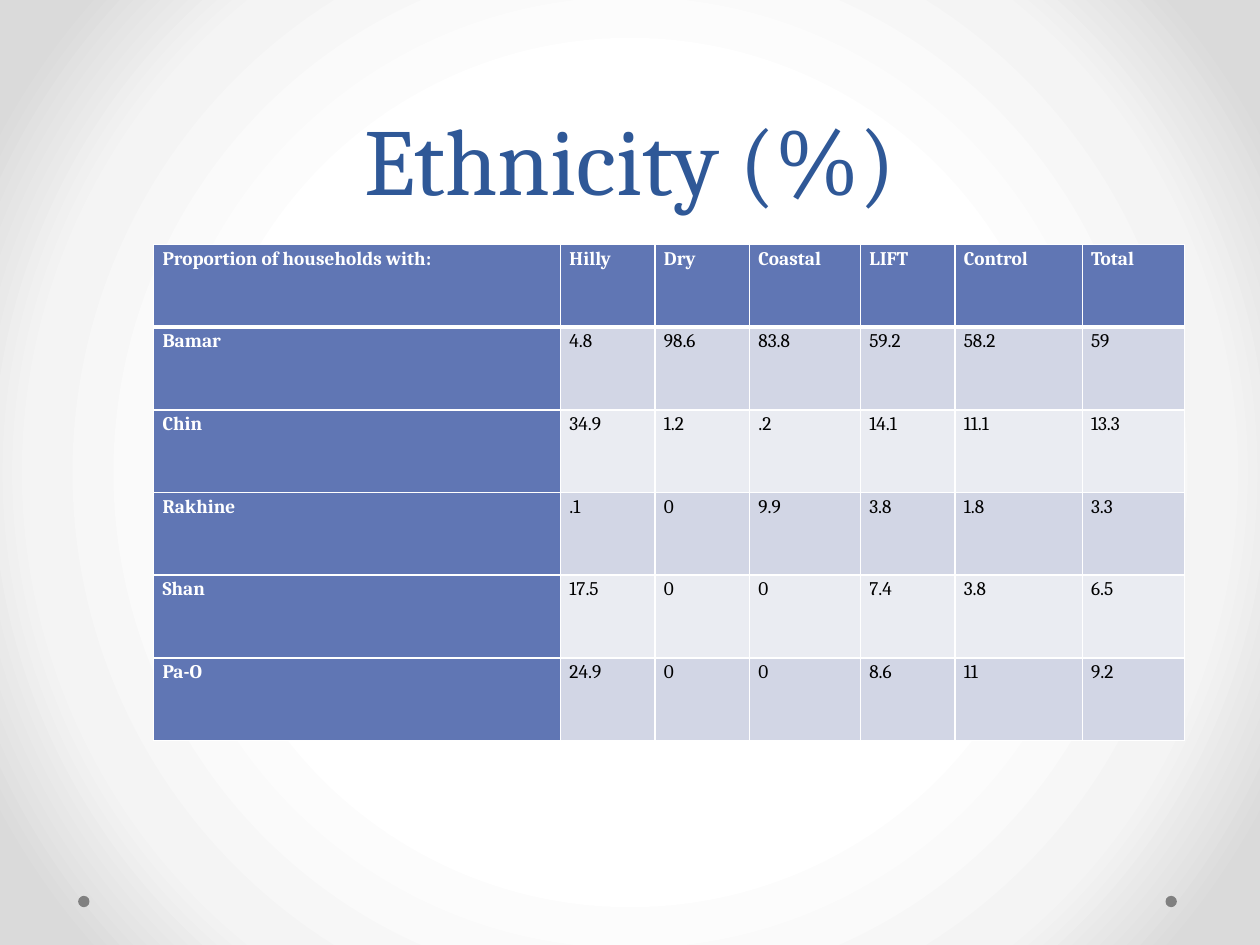
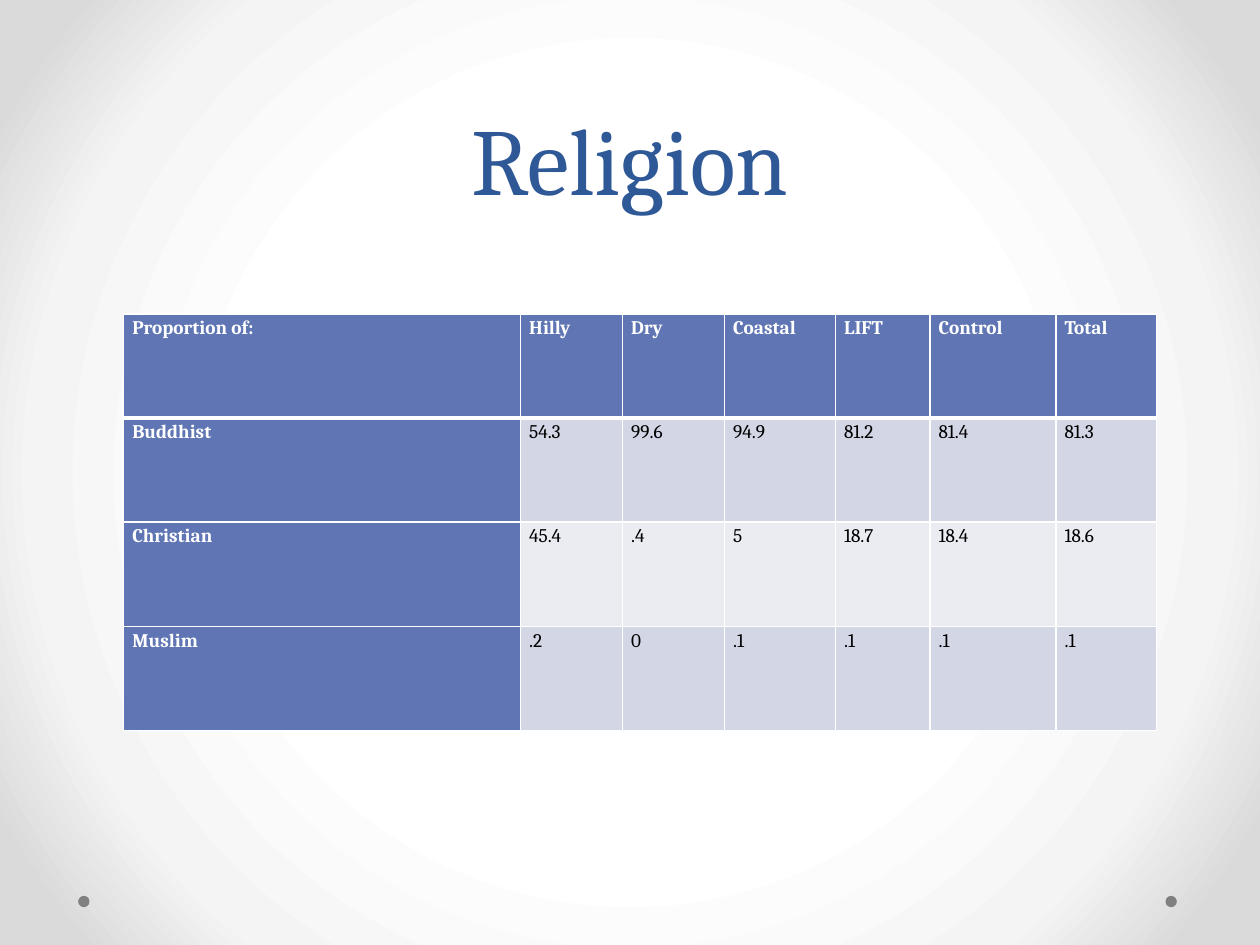
from lxml.etree import SubElement
from pptx import Presentation
from pptx.dml.color import RGBColor
from pptx.enum.shapes import MSO_SHAPE
from pptx.enum.text import MSO_ANCHOR, MSO_AUTO_SIZE, PP_ALIGN
from pptx.oxml import parse_xml
from pptx.oxml.ns import nsdecls, qn
from pptx.util import Inches, Pt

FONT = "Cambria"
WHITE, BLACK = "FFFFFF", "000000"
TITLE_BLUE, HEADER_BLUE = "2F5897", "6076B4"
BANDS = ("D2D6E5", "EAECF2")
DOT_GRAY = "808080"
BACKDROP_STOPS = ((50, "FFFFFF"), (76, "F4F4F4"), (92, "DADADA"))

TITLE_FRAME = {"vertical_anchor": MSO_ANCHOR.BOTTOM, "auto_size": MSO_AUTO_SIZE.NONE,
               "word_wrap": True}
TITLE_PARAGRAPH = {"alignment": PP_ALIGN.CENTER, "line_spacing": Pt(58)}
TITLE_FONT = {"name": FONT, "size": Pt(54)}
CELL_MARGINS = {"margin_left": Inches(0.07), "margin_right": Inches(0.07),
                "margin_top": 0, "margin_bottom": 0}
CELL_PARAGRAPH = {"line_spacing": 1.15, "space_before": Pt(6), "space_after": Pt(6)}
CELL_FONT = {"name": FONT, "size": Pt(11)}

REGIONS = ["Hilly", "Dry", "Coastal", "LIFT", "Control", "Total"]
ETHNICITY = [
    ["Proportion of households with:", *REGIONS],
    ["Bamar", "4.8", "98.6", "83.8", "59.2", "58.2", "59"],
    ["Chin", "34.9", "1.2", ".2", "14.1", "11.1", "13.3"],
    ["Rakhine", ".1", "0", "9.9", "3.8", "1.8", "3.3"],
    ["Shan", "17.5", "0", "0", "7.4", "3.8", "6.5"],
    ["Pa-O", "24.9", "0", "0", "8.6", "11", "9.2"],
]
RELIGION = [
    ["Proportion of:", *REGIONS],
    ["Buddhist", "54.3", "99.6", "94.9", "81.2", "81.4", "81.3"],
    ["Christian", "45.4", ".4", "5", "18.7", "18.4", "18.6"],
    ["Muslim", ".2", "0", ".1", ".1", ".1", ".1"],
]


def color(hex_value):
    return RGBColor.from_string(hex_value)


def apply(target, values):
    for name, value in values.items():
        setattr(target, name, value)


def paint_backdrop(master):
    master.background.fill.solid()
    properties = master.element.xpath(".//p:bgPr")[0]
    stops = "".join(
        f'<a:gs pos="{position * 1000}"><a:srgbClr val="{shade}"/></a:gs>'
        for position, shade in BACKDROP_STOPS)
    gradient = parse_xml(
        f'<a:gradFill {nsdecls("a")} rotWithShape="1"><a:gsLst>{stops}</a:gsLst>'
        '<a:path path="circle"><a:fillToRect l="50000" t="50000" r="50000" b="50000"/>'
        '</a:path></a:gradFill>')
    properties.replace(properties.find(qn("a:solidFill")), gradient)


def add_corner_dots(slide, master):
    for left in (9.25, 0.62):
        dot = slide.shapes.add_shape(
            MSO_SHAPE.OVAL, Inches(left), Inches(7.11), Inches(0.09), Inches(0.09))
        dot.shadow.inherit = False
        dot.fill.solid()
        dot.fill.fore_color.rgb = color(DOT_GRAY)
        dot.line.fill.background()
        master.element.cSld.spTree.append(dot.element)


def set_title(slide, wording):
    title = slide.shapes.title
    apply(title, {"left": Inches(0.5), "top": 0, "width": Inches(9), "height": Inches(1.75)})
    title.text = wording
    apply(title.text_frame, TITLE_FRAME)
    paragraph = title.text_frame.paragraphs[0]
    apply(paragraph, TITLE_PARAGRAPH)
    font = paragraph.runs[0].font
    apply(font, TITLE_FONT)
    font.color.rgb = color(TITLE_BLUE)


def set_borders(cell, row):
    widths = {"lnL": 1, "lnR": 1, "lnT": 3 if row == 1 else 1, "lnB": 3 if row == 0 else 1}
    properties = cell._tc.get_or_add_tcPr()
    for edge, width in widths.items():
        border = SubElement(properties, qn(f"a:{edge}"), w=str(Pt(width)))
        SubElement(SubElement(border, qn("a:solidFill")), qn("a:srgbClr"), val=WHITE)


def format_cell(cell, wording, row, column):
    heading = row == 0 or column == 0
    set_borders(cell, row)
    cell.fill.solid()
    cell.fill.fore_color.rgb = color(HEADER_BLUE if heading else BANDS[(row - 1) % 2])
    apply(cell, CELL_MARGINS)
    cell.text = wording
    paragraph = cell.text_frame.paragraphs[0]
    apply(paragraph, CELL_PARAGRAPH)
    font = paragraph.runs[0].font
    apply(font, CELL_FONT)
    font.bold = heading
    font.color.rgb = color(WHITE if heading else BLACK)


def add_shares(slide, shares, left, top, height, widths):
    table = slide.shapes.add_table(
        len(shares), len(widths), Inches(left), Inches(top),
        Inches(sum(widths)), Inches(height)).table
    table.first_col = True
    for column, width in zip(table.columns, widths):
        column.width = Inches(width)
    for row, values in enumerate(shares):
        for column, wording in enumerate(values):
            format_cell(table.cell(row, column), wording, row, column)


def main():
    deck = Presentation()
    apply(deck, {"slide_width": Inches(10), "slide_height": Inches(7.5)})
    title_only = deck.slide_layouts.get_by_name("Title Only")
    paint_backdrop(deck.slide_master)

    ethnicity = deck.slides.add_slide(title_only)
    add_corner_dots(ethnicity, deck.slide_master)
    set_title(ethnicity, "Ethnicity (%)")
    add_shares(ethnicity, ETHNICITY, 1.22, 1.94, 3.94,
               [3.23, 0.75, 0.75, 0.88, 0.75, 1.01, 0.81])

    religion = deck.slides.add_slide(title_only)
    set_title(religion, "Religion")
    add_shares(religion, RELIGION, 0.98, 2.49, 3.31,
               [3.15, 0.81, 0.81, 0.88, 0.75, 1, 0.8])

    deck.save("out.pptx")


if __name__ == "__main__":
    main()
